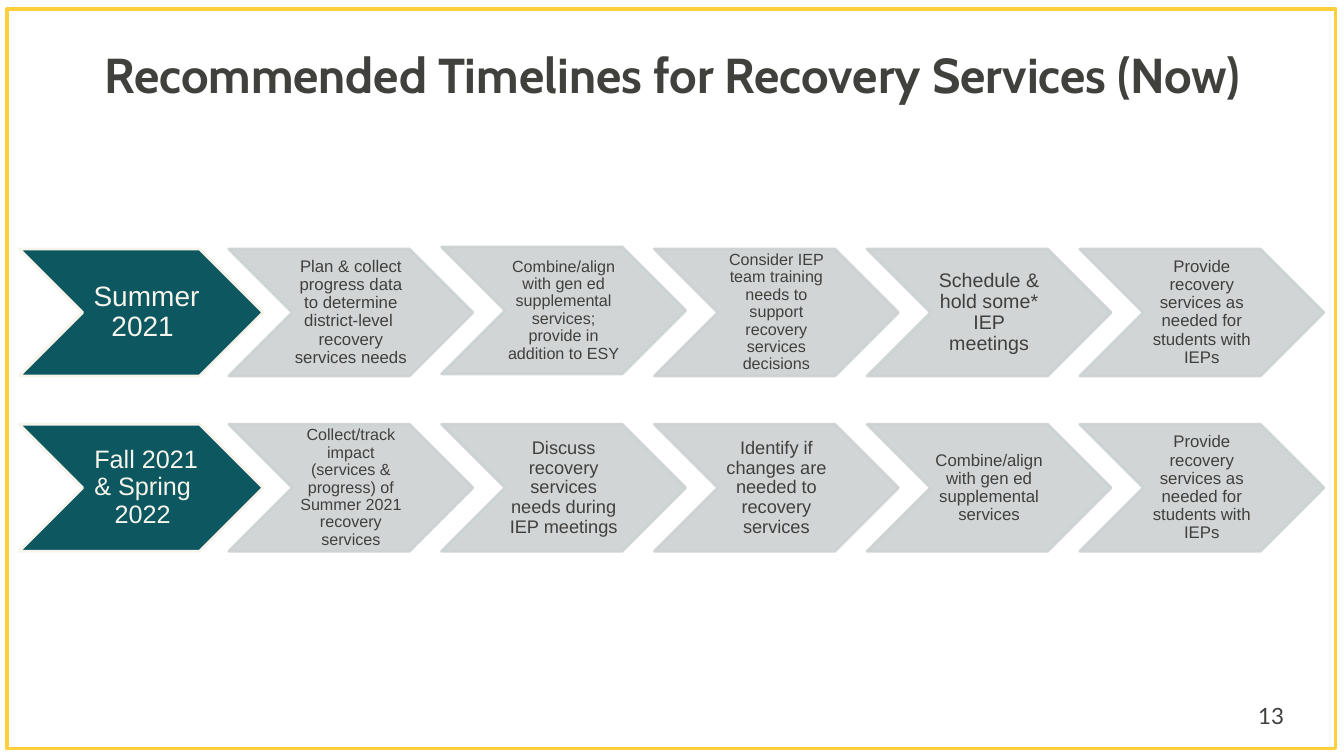
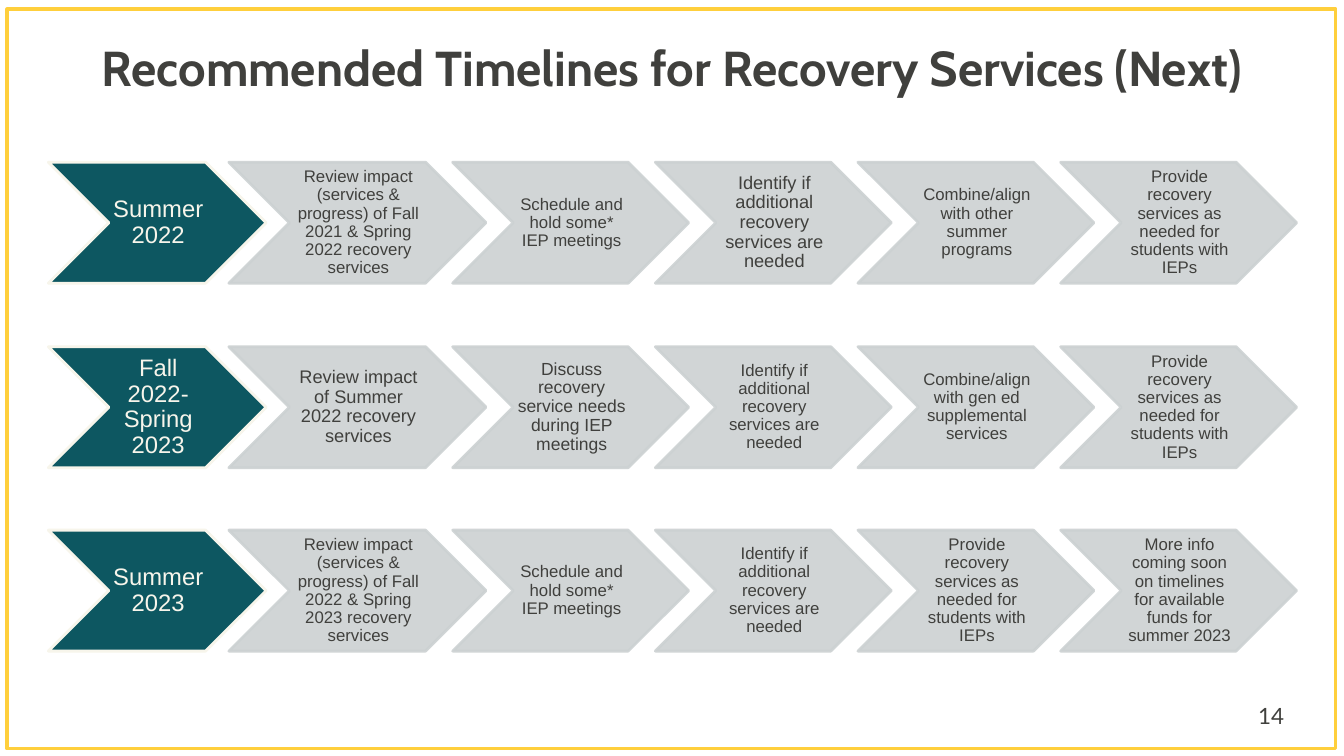
from lxml import etree
from pptx import Presentation
from pptx.dml.color import RGBColor
from pptx.enum.shapes import MSO_SHAPE
from pptx.enum.text import MSO_ANCHOR, PP_ALIGN
from pptx.oxml.ns import qn
from pptx.util import Pt

PX = 9144  # 100 px to the inch
CHEVRON, RECTANGLE = MSO_SHAPE.CHEVRON, MSO_SHAPE.RECTANGLE
CENTER, LEFT = PP_ALIGN.CENTER, PP_ALIGN.LEFT
MIDDLE = MSO_ANCHOR.MIDDLE

COLORS = {
    "frame": "FFCF3C",
    "text": "40403D",
    "label": "0D5761",
    "label_text": "F7F5EB",
    "step": "CCD1D2",
}
STEP_LEFT = 227
STEP_ALPHA = 90000
PROVIDE = "Provide recovery services as needed for students with IEPs"
SCHEDULE = "Schedule and hold some* IEP meetings"
IDENTIFY = "Identify if additional recovery services are needed"
COMBINE = "Combine/align with gen ed supplemental services"

# Each row: top, label, then steps as (text, size, lift)
SLIDES = [
    {
        "number": "13",
        "title": "Recommended Timelines for Recovery Services (Now)",
        "title_box": (29, 38, 1276, 78),
        "label_left": 19, "label_width": 242, "height": 126,
        "step_widths": [242] * 5, "overlap": 31,
        "label_insets": (3, 0), "step_insets": (1, 1),
        "rows": [
            (247, (" Summer 2021", 20), [
                ("Plan & collect progress data to determine district-level  recovery services needs", 12, 0),
                ("Combine/align with gen ed supplemental services; provide in addition to ESY", 11.5, 2),
                ("Consider IEP team training needs to support recovery services decisions", 11.5, 0),
                ("Schedule & hold some* IEP meetings", 14, 0),
                ("Provide recovery services as needed for students with IEPs", 12, 0),
            ]),
            (421, (" Fall 2021 & Spring 2022", 18), [
                ("Collect/track impact (services & progress) of Summer 2021 recovery services", 11.5, 0),
                ("Discuss recovery services needs during IEP meetings", 13, 0),
                ("Identify if changes are needed to recovery services", 13, 0),
                (COMBINE, 12, 0),
                ("Provide recovery services as needed for students with IEPs", 12, 0),
            ]),
        ],
    },
    {
        "number": "14",
        "title": "Recommended Timelines for Recovery Services (Next)",
        "title_box": (20, 31, 1293, 78),
        "label_left": 48, "label_width": 216, "height": 120,
        "step_widths": [255] + [234] * 4, "overlap": 33,
        "label_insets": (2, 0), "step_insets": (2, 0),
        "rows": [
            (161, ("Summer 2022", 17), [
                ("Review impact (services & progress) of Fall 2021 & Spring 2022 recovery services", 12, 0),
                (SCHEDULE, 12, 0),
                (IDENTIFY, 13, 0),
                ("Combine/align with other summer programs", 12, 0),
                (PROVIDE, 12, 0),
            ]),
            (344, ("Fall 2022-Spring 2023", 17), [
                ("Review impact of Summer 2022 recovery services", 13, 0),
                ("Discuss recovery service needs during IEP meetings", 12.5, 0),
                (IDENTIFY, 12, 0),
                (COMBINE, 12, 0),
                (PROVIDE, 12, 0),
            ]),
            (526, ("Summer 2023", 17), [
                ("Review impact (services & progress) of Fall 2022 & Spring 2023 recovery services", 12, 0),
                (SCHEDULE, 12, 0),
                (IDENTIFY, 12, 0),
                (PROVIDE, 12, 0),
                ("More info coming soon on timelines for available funds for summer 2023", 12, 0),
            ]),
        ],
    },
]


def write_text(shape, text, font_name, size, color, insets, align=CENTER, spacing=0.9, bold=False):
    frame = shape.text_frame
    frame.word_wrap = True
    frame.vertical_anchor = MIDDLE
    left, top, right, bottom = [inset * PX for inset in insets]
    frame.margin_left, frame.margin_top = left, top
    frame.margin_right, frame.margin_bottom = right, bottom
    paragraph = frame.paragraphs[0]
    paragraph.alignment = align
    paragraph.line_spacing = spacing
    run = paragraph.add_run()
    run.text = text
    run.font.name = font_name
    run.font.size = Pt(size)
    run.font.bold = bold
    run.font.color.rgb = RGBColor.from_string(COLORS[color])


def add_outlined(slide, kind, box, fill, line, line_width):
    shape = slide.shapes.add_shape(kind, *[length * PX for length in box])
    shape.shadow.inherit = False
    if fill:
        shape.fill.solid()
        shape.fill.fore_color.rgb = RGBColor.from_string(COLORS[fill])
    else:
        shape.fill.background()
    shape.line.color.rgb = RGBColor.from_string(COLORS[line])
    shape.line.width = Pt(line_width)
    return shape


presentation = Presentation()
presentation.slide_width = 1333 * PX
presentation.slide_height = 750 * PX
blank_layout = presentation.slide_layouts[6]

for content in SLIDES:
    slide = presentation.slides.add_slide(blank_layout)

    # Frame, title and page number
    add_outlined(slide, RECTANGLE, (7, 9, 1318, 734), None, "frame", 2.25)
    title = slide.shapes.add_textbox(*[length * PX for length in content["title_box"]])
    write_text(title, content["title"], "Cabin", 35, "text", (10, 5, 10, 5), bold=True)
    page_number = slide.shapes.add_textbox(1238 * PX, 690 * PX, 70 * PX, 40 * PX)
    write_text(page_number, content["number"], "Lato", 16, "text", (10, 5, 10, 5), LEFT, 1.0)

    # Timeline rows
    height = content["height"]
    label_left_inset, label_right_inset = content["label_insets"]
    step_left_inset, step_right_inset = content["step_insets"]
    for top, (label_text, label_size), steps in content["rows"]:
        label_box = (content["label_left"], top, content["label_width"], height)
        label = add_outlined(slide, CHEVRON, label_box, "label", "label_text", 2)
        write_text(label, label_text, "Arial", label_size, "label_text",
                   (label_left_inset, 1, label_right_inset, 1))

        left = STEP_LEFT
        for width, (text, size, lift) in zip(content["step_widths"], steps):
            step = add_outlined(slide, CHEVRON, (left, top - lift, width, height), "step", "step", 2)
            # Slightly transparent fill and line
            for color in step.element.spPr.iter(qn("a:srgbClr")):
                etree.SubElement(color, qn("a:alpha")).set("val", str(STEP_ALPHA))
            write_text(step, text, "Arial", size, "text", (step_left_inset, 1, step_right_inset, 1))
            left += width - content["overlap"]

presentation.save("out.pptx")
